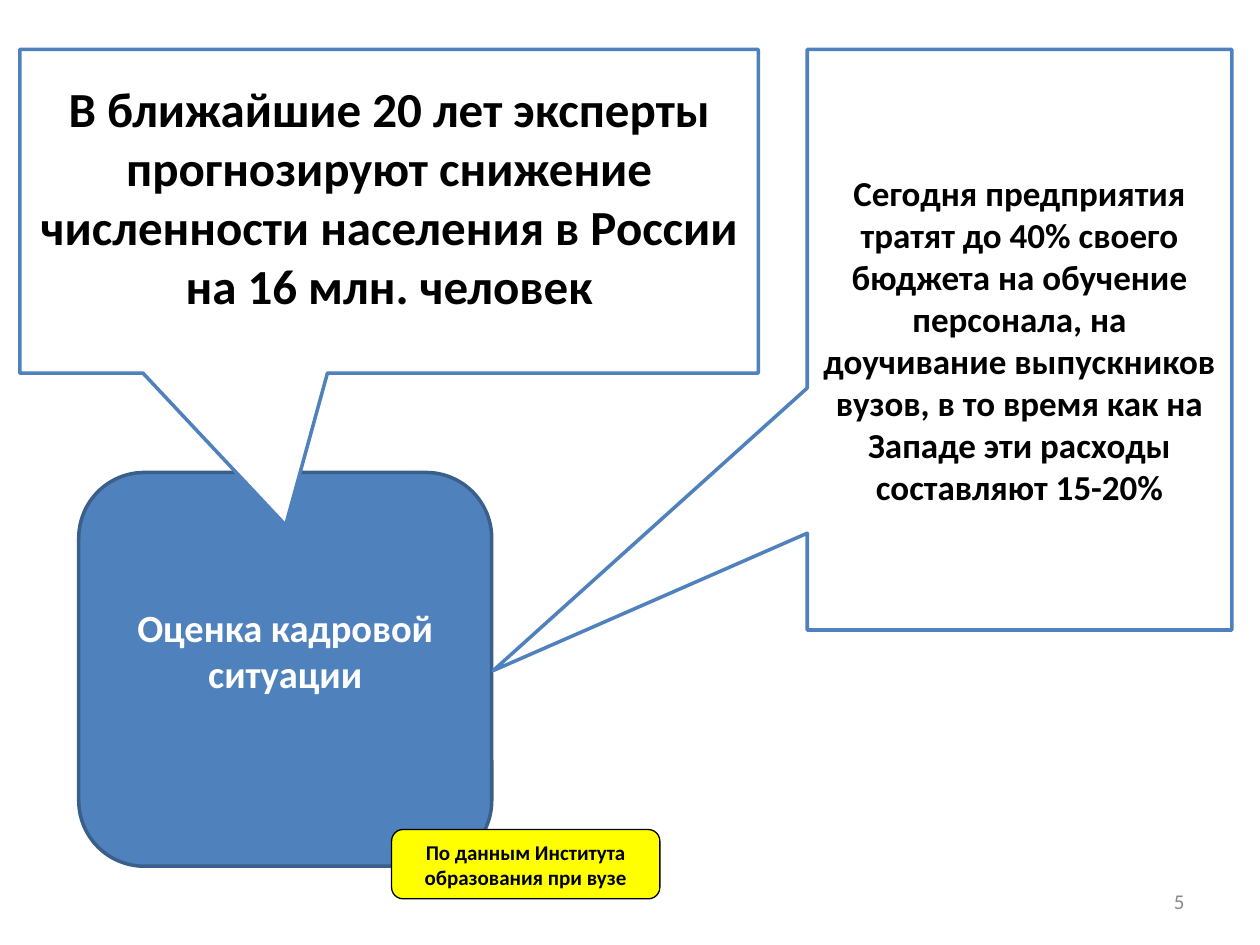
"""Builds the slide on the staffing outlook with two callouts."""
from pptx import Presentation
from pptx.dml.color import RGBColor
from pptx.enum.shapes import MSO_SHAPE
from pptx.enum.text import MSO_ANCHOR, PP_ALIGN
from pptx.util import Pt

FONT = "Calibri"
BLUE = RGBColor(0x4F, 0x81, 0xBD)
DARK_BLUE = RGBColor(0x3A, 0x5F, 0x8C)
YELLOW = RGBColor(0xFF, 0xFF, 0x00)
WHITE = RGBColor(0xFF, 0xFF, 0xFF)
BLACK = RGBColor(0x00, 0x00, 0x00)
GREY = RGBColor(0x89, 0x89, 0x89)

FORECAST = ("В ближайшие 20 лет эксперты прогнозируют снижение численности "
            "населения в России на 16 млн. человек")
TRAINING_COSTS = ("Сегодня предприятия тратят до 40% своего бюджета на обучение "
                  "персонала, на доучивание выпускников вузов, в то время как на "
                  "Западе эти расходы составляют 15-20%")


def write(shape, text, size, color, bold=True, align=PP_ALIGN.CENTER,
          anchor=MSO_ANCHOR.MIDDLE):
    frame = shape.text_frame
    frame.text = text
    frame.word_wrap = True
    frame.vertical_anchor = anchor
    for paragraph in frame.paragraphs:
        paragraph.alignment = align
        for run in paragraph.runs:
            run.font.name = FONT
            run.font.size = Pt(size)
            run.font.bold = bold
            run.font.color.rgb = color


def add_box(slide, preset, place, fill, outline, width, adjustments=()):
    box = slide.shapes.add_shape(preset, *map(Pt, place))
    box.shadow.inherit = False
    box.fill.solid()
    box.fill.fore_color.rgb = fill
    box.line.color.rgb = outline
    box.line.width = Pt(width)
    for index, value in enumerate(adjustments):
        box.adjustments[index] = value
    return box


def add_callout(slide, place, pointer, text, size):
    callout = add_box(slide, MSO_SHAPE.RECTANGULAR_CALLOUT, place,
                      WHITE, BLUE, 2, pointer)
    write(callout, text, size, BLACK)
    return callout


def add_page_number(slide, place, number):
    page_number = slide.shapes.add_textbox(*map(Pt, place))
    write(page_number, number, 12, GREY, bold=False, align=PP_ALIGN.RIGHT)


def main():
    presentation = Presentation()
    presentation.slide_width, presentation.slide_height = Pt(720), Pt(540)
    slide = presentation.slides.add_slide(presentation.slide_layouts[6])

    assessment = add_box(slide, MSO_SHAPE.ROUNDED_RECTANGLE,
                         (45, 270, 236, 225), BLUE, DARK_BLUE, 2)
    write(assessment, "Оценка кадровой ситуации", 22, WHITE)
    assessment.text_frame.margin_bottom = Pt(25.6)

    forecast = add_callout(slide, (11.3, 28.2, 422, 185), (-0.14, 0.97),
                           FORECAST, 28)
    forecast.text_frame.margin_bottom = Pt(20.7)

    add_page_number(slide, (516, 500.5, 168, 28.75), "5")
    add_callout(slide, (461.3, 28.2, 242.6, 331.8), (-1.24, 0.57),
                TRAINING_COSTS, 20)

    data_source = add_box(slide, MSO_SHAPE.ROUNDED_RECTANGLE,
                          (223.8, 474, 153.3, 39.6), YELLOW, BLACK, 0.75)
    write(data_source, "По данным Института\nобразования при вузе", 12, BLACK,
          anchor=MSO_ANCHOR.TOP)

    presentation.save("out.pptx")


if __name__ == "__main__":
    main()
